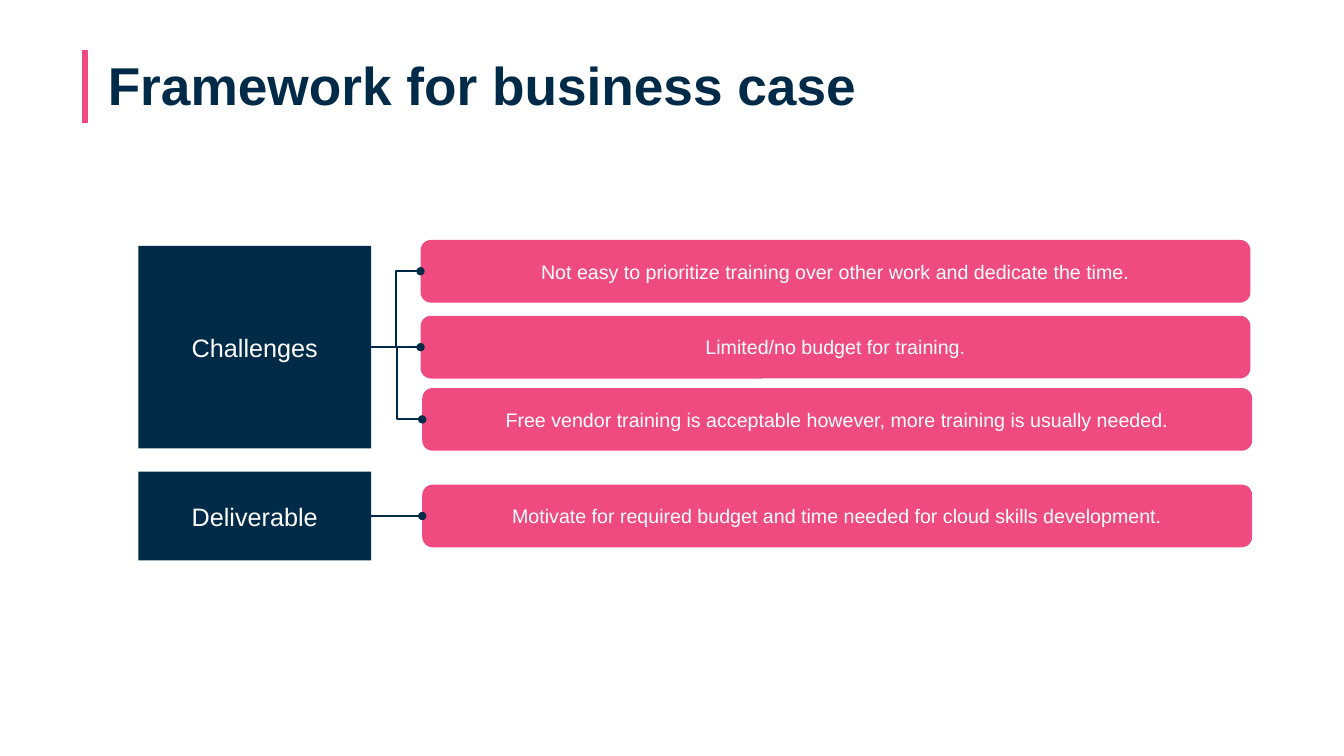
from lxml import etree
from pptx import Presentation
from pptx.dml import color
from pptx.enum import shapes, text
from pptx.oxml import ns
from pptx.util import Pt

NAVY, PINK, WHITE = "002B48", "EF4B80", "FFFFFF"
BOX_X, BOX_W = 98.8, 166.4
PILL_W, PILL_H = 592.8, 44.8
GROUPS = [
    ("Challenges", 248, 144.8, [
        (300.4, 193.8, "Not easy to prioritize training over other work and dedicate the time."),
        (300.4, 248, "Limited/no budget for training."),
        (301.6, 299.6, "Free vendor training is acceptable however, more training is usually needed."),
    ]),
    ("Deliverable", 368.6, 63.4, [
        (301.6, 368.6, "Motivate for required budget and time needed for cloud skills development."),
    ]),
]


def rgb(value):
    return color.RGBColor.from_string(value)


def set_all(target, values):
    for name, value in values.items():
        setattr(target, name, value)


def format_font(font, size, hex_color, bold=False):
    set_all(font, {"name": "Arial", "size": Pt(size), "bold": bold})
    font.color.rgb = rgb(hex_color)


def add_title(s, content):
    sp = s.shapes.title
    set_all(sp, {"left": Pt(77), "top": Pt(44.6), "width": Pt(817.2), "height": Pt(80)})
    tf = sp.text_frame
    set_all(tf, {"margin_left": 0, "margin_top": 0, "margin_right": 0, "margin_bottom": 0,
                 "vertical_anchor": text.MSO_ANCHOR.TOP, "word_wrap": True,
                 "auto_size": text.MSO_AUTO_SIZE.NONE})
    p = tf.paragraphs[0]
    set_all(p, {"alignment": text.PP_ALIGN.LEFT, "line_spacing": Pt(38)})
    r = p.add_run()
    r.text = content
    format_font(r.font, 38, NAVY, True)


def add_box(s, kind, x, middle, w, h, fill, content, size):
    sp = s.shapes.add_shape(kind, Pt(x), Pt(middle - h / 2), Pt(w), Pt(h))
    sp.shadow.inherit = False
    sp.fill.solid()
    sp.fill.fore_color.rgb = rgb(fill)
    sp.line.fill.background()
    tf = sp.text_frame
    set_all(tf, {"word_wrap": True, "vertical_anchor": text.MSO_ANCHOR.MIDDLE})
    p = tf.paragraphs[0]
    p.alignment = text.PP_ALIGN.CENTER
    r = p.add_run()
    r.text = content
    format_font(r.font, size, WHITE)
    return sp


def add_line(s, kind, x1, y1, x2, y2, hex_color, width):
    cx = s.shapes.add_connector(kind, Pt(x1), Pt(y1), Pt(x2), Pt(y2))
    cx.line.color.rgb = rgb(hex_color)
    cx.line.width = Pt(width)
    etree.SubElement(cx._element.spPr, ns.qn("a:effectLst"))
    return cx


def add_link(s, box, pill, y1, x2, y2):
    kind = shapes.MSO_CONNECTOR.STRAIGHT if y1 == y2 else shapes.MSO_CONNECTOR.ELBOW
    cx = add_line(s, kind, BOX_X + BOX_W, y1, x2, y2, NAVY, 1.5)
    cx.begin_connect(box, 3)
    cx.end_connect(pill, 1)
    etree.SubElement(cx.line._get_or_add_ln(), ns.qn("a:tailEnd"), type="oval")


def add_group(s, label, middle, height, items):
    box = add_box(s, shapes.MSO_SHAPE.RECTANGLE, BOX_X, middle, BOX_W, height, NAVY, label, 18)
    for x, y, content in items:
        pill = add_box(s, shapes.MSO_SHAPE.ROUNDED_RECTANGLE, x, y, PILL_W, PILL_H,
                       PINK, content, 14)
        add_link(s, box, pill, middle, x, y)


def main():
    prs = Presentation()
    set_all(prs, {"slide_width": Pt(960), "slide_height": Pt(540)})
    s = prs.slides.add_slide(prs.slide_layouts[5])
    add_line(s, shapes.MSO_CONNECTOR.STRAIGHT, 60.8, 35.6, 60.8, 87.8, PINK, 4.5)
    add_title(s, "Framework for business case")
    for group in GROUPS:
        add_group(s, *group)
    prs.save("out.pptx")


if __name__ == "__main__":
    main()
